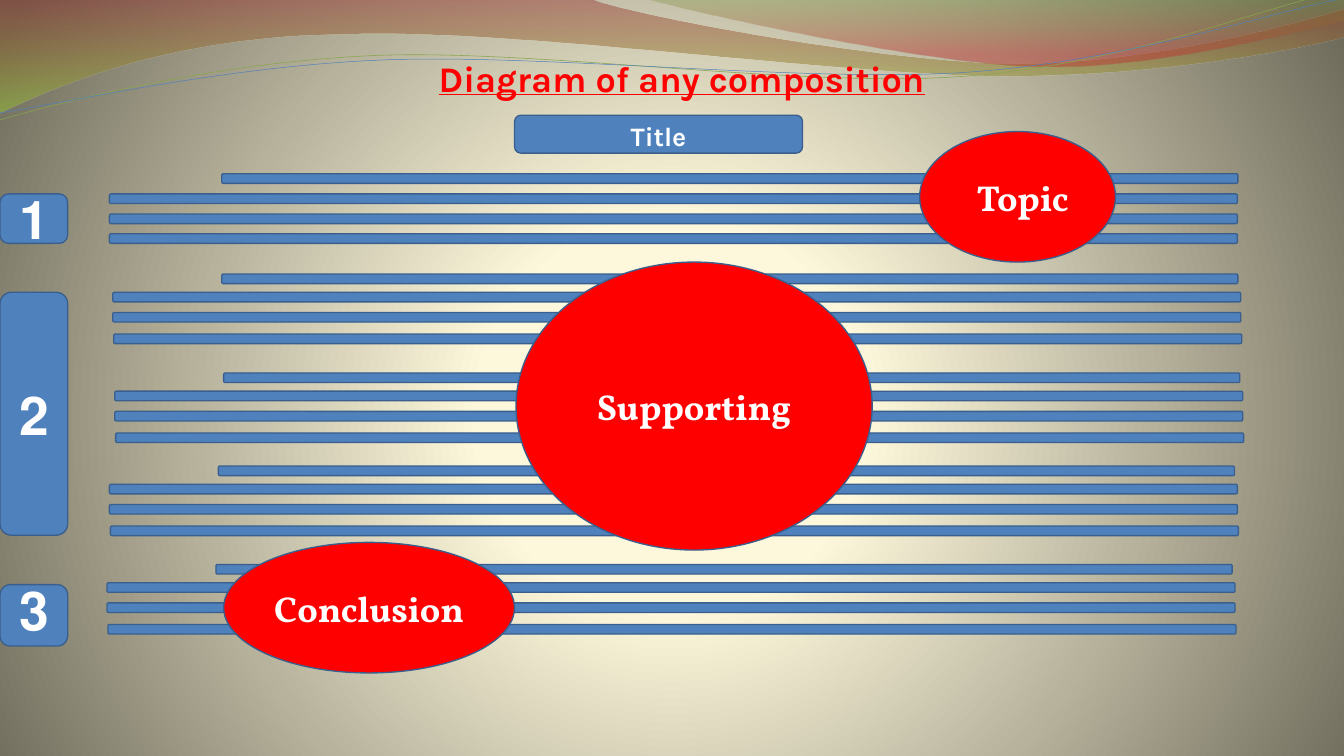
from math import cos, radians, sin

from pptx import Presentation
from pptx.dml.color import RGBColor
from pptx.enum.shapes import MSO_SHAPE
from pptx.enum.text import MSO_ANCHOR, PP_ALIGN
from pptx.oxml import parse_xml
from pptx.oxml.ns import nsdecls, qn
from pptx.util import Inches, Pt

ROUNDED, ELLIPSE = MSO_SHAPE.ROUNDED_RECTANGLE, MSO_SHAPE.OVAL
TOP, MIDDLE, BOTTOM = MSO_ANCHOR.TOP, MSO_ANCHOR.MIDDLE, MSO_ANCHOR.BOTTOM
CENTER = PP_ALIGN.CENTER
TITLE_ONLY = 5

COLORS = {
    "blue": "4F81BD", "edge": "3A5F8C", "red": "FF0000", "white": "FFFFFF",
    "olive": "89A54F", "cream": "FFF9DA", "ivory": "FDF7DB", "umber": "6F6C5C",
    "maroon": "973330", "lime": "95C238", "moss": "769537", "brick": "BE3330",
}
HEADING_FONT, BODY_FONT = "Karla", "Vollkorn"

# Each wave: a start point, then cubic segments (6 numbers) or straight ones (2).
BROAD_WAVE = [
    (0, -0.01), (12.33, -0.02), (13.32, 0.35, 18.58, 1.32, 21.23, 1.32),
    (23.88, 1.32, 26.83, 0.54, 28, 0.18), (28.03, 0.76),
    (27.53, 0.92, 24.35, 1.59, 20.88, 1.58), (17.41, 1.57, 10.69, 0.58, 7.2, 0.71),
    (3.62, 0.74, 1.28, 1.74, -0.03, 2.37),
]
RIGHT_WAVE = [
    (13.42, -0.02), (14.26, 0.23, 19.09, 1.29, 21.52, 1.37),
    (23.95, 1.45, 26.92, 0.67, 28, 0.44), (28, 0),
]
OLIVE_THREAD = [
    (-0.01, 2.5), (1.34, 2.11, 4.42, 1.31, 7.75, 1.16),
    (11.07, 1.01, 16.58, 1.83, 19.94, 1.6), (23.31, 1.38, 26.28, 0.17, 27.94, -0.2),
]
BLUE_THREAD = [
    (-0.01, 2.35), (1.32, 2.16, 4.59, 1.39, 7.93, 1.25),
    (11.27, 1.11, 16.71, 1.72, 20.06, 1.51), (23.41, 1.29, 26.35, 0.29, 28, -0.04),
]
THREAD_TILT = -2.7
THREAD_CENTER = (13.98, 1.23)

# Each paragraph: left of its first line, left of the others, top, line offsets,
# extra shift of the last line.
EVEN_LINES = (0, 0.42, 0.84, 1.25)
LOOSE_LINES = (0, 0.38, 0.8, 1.25)
PARAGRAPHS = [
    (4.62, 2.28, 3.62, EVEN_LINES, 0),
    (4.62, 2.35, 5.71, LOOSE_LINES, 0.02),
    (4.66, 2.39, 7.77, LOOSE_LINES, 0.02),
    (4.55, 2.28, 9.71, LOOSE_LINES, 0.02),
    (4.5, 2.23, 11.76, LOOSE_LINES, 0.02),
]
FIRST_LINE_WIDTH, LINE_WIDTH, LINE_HEIGHT = 21.17, 23.5, 0.2

PARTS = [
    ("Topic ", 19.16, 2.74, 4.08, 2.72),
    ("Supporting", 10.75, 5.46, 7.42, 6),
    ("Conclusion", 4.66, 11.3, 6.06, 2.72),
]
NUMBERS = [
    ("1", 4.04, 1.03, MIDDLE),
    ("2", 6.09, 5.06, MIDDLE),
    ("3", 12.18, 1.28, BOTTOM),
]


def rgb(name):
    return RGBColor.from_string(COLORS[name])


def pairs(segment):
    """Split a flat segment into (x, y) points."""
    return list(zip(segment[::2], segment[1::2]))


def level(wave):
    """Turn a tilted thread back to the horizontal."""
    turn, (cx, cy) = radians(-THREAD_TILT), THREAD_CENTER
    flat = []
    for segment in wave:
        turned = []
        for x, y in pairs(segment):
            dx, dy = x - cx, y - cy
            turned += [cx + dx * cos(turn) - dy * sin(turn),
                       cy + dx * sin(turn) + dy * cos(turn)]
        flat.append(tuple(turned))
    return flat


def set_gradient(fill, holder, stops, direction):
    """Fill with stops of (position %, colour, opacity %)."""
    fill.gradient()
    stop_xml = ""
    for pos, color, opacity in stops:
        alpha = f'<a:alpha val="{opacity * 1000}"/>' if opacity < 100 else ""
        stop_xml += (f'<a:gs pos="{pos * 1000}"><a:srgbClr val="{COLORS[color]}">'
                     f"{alpha}</a:srgbClr></a:gs>")
    gradient = parse_xml(
        f'<a:gradFill {nsdecls("a")} rotWithShape="1"><a:gsLst>{stop_xml}</a:gsLst>'
        f"{direction}</a:gradFill>")
    holder.replace(holder.find(qn("a:gradFill")), gradient)


class DiagramSlide:
    def __init__(self, presentation):
        self.slide = presentation.slides.add_slide(presentation.slide_layouts[TITLE_ONLY])
        self.shapes = self.slide.shapes

    def background(self, stops):
        glow = ('<a:path path="circle"><a:fillToRect l="10000" t="110000" '
                'r="10000" b="100000"/></a:path>')
        fill = self.slide.background.fill
        fill.gradient()
        set_gradient(fill, self.slide.element.find(".//" + qn("p:bgPr")), stops, glow)

    def _freeform(self, wave, close):
        """Draw straight through the segment ends, then bend the cubic segments."""
        ends = [(Inches(segment[-2]), Inches(segment[-1])) for segment in wave]
        builder = self.shapes.build_freeform(*ends[0], scale=1.0)
        builder.add_line_segments(ends[1:], close=close)
        shape = builder.convert_to_shape()
        shape.shadow.inherit = False
        straights = list(shape.element.iter(qn("a:lnTo")))
        for straight, segment in zip(straights, wave[1:]):
            if len(segment) == 6:
                points = "".join(
                    f'<a:pt x="{Inches(x) - shape.left}" y="{Inches(y) - shape.top}"/>'
                    for x, y in pairs(segment))
                curve = parse_xml(
                    f'<a:cubicBezTo {nsdecls("a")}>{points}</a:cubicBezTo>')
                straight.getparent().replace(straight, curve)
        return shape

    def wave(self, wave, stops):
        shape = self._freeform(wave, True)
        shape.line.fill.background()
        set_gradient(shape.fill, shape.element.spPr, stops,
                     '<a:lin ang="5400000" scaled="0"/>')

    def thread(self, wave, color, width):
        shape = self._freeform(level(wave), False)
        shape.rotation = THREAD_TILT
        shape.fill.background()
        shape.line.color.rgb = rgb(color)
        shape.line.width = Pt(width)

    def _write(self, frame, text, font, size, color, anchor):
        frame.text = text
        frame.word_wrap = True
        frame.vertical_anchor = anchor
        paragraph = frame.paragraphs[0]
        paragraph.alignment = CENTER
        style = paragraph.runs[0].font
        style.name, style.size, style.bold = font, Pt(size), True
        style.color.rgb = rgb(color)
        return paragraph

    def title(self, text, left, top, width, height):
        title = self.shapes.title
        title.left, title.top = Inches(left), Inches(top)
        title.width, title.height = Inches(width), Inches(height)
        paragraph = self._write(title.text_frame, text, HEADING_FONT, 54, "red", TOP)
        paragraph.runs[0].font.underline = True
        self.shapes.element.append(title.element)  # in front of the waves

    def block(self, kind, left, top, width, height, fill="blue"):
        shape = self.shapes.add_shape(
            kind, Inches(left), Inches(top), Inches(width), Inches(height))
        shape.shadow.inherit = False
        shape.fill.solid()
        shape.fill.fore_color.rgb = rgb(fill)
        shape.line.color.rgb = rgb("edge")
        shape.line.width = Pt(2)
        return shape

    def label(self, shape, text, size, font=BODY_FONT, anchor=MIDDLE):
        paragraph = self._write(shape.text_frame, text, font, size, "white", anchor)
        paragraph._p.get_or_add_pPr().set("rtl", "1")


def main():
    presentation = Presentation()
    presentation.slide_width, presentation.slide_height = Inches(28), Inches(15.75)
    diagram = DiagramSlide(presentation)

    diagram.background([(0, "cream", 100), (25, "ivory", 100), (100, "umber", 100)])
    diagram.wave(BROAD_WAVE, [(0, "maroon", 45), (100, "lime", 55)])
    diagram.wave(RIGHT_WAVE, [(0, "moss", 30), (80, "brick", 45)])
    diagram.thread(OLIVE_THREAD, "olive", 0.85)
    diagram.thread(BLUE_THREAD, "blue", 0.75)
    diagram.title("Diagram of any composition", 7.91, 1.12, 12.58, 0.49)

    for first_left, left, top, offsets, last_shift in PARAGRAPHS:
        lefts = (first_left, left, left, left + last_shift)
        widths = (FIRST_LINE_WIDTH,) + (LINE_WIDTH,) * 3
        for line_left, offset, width in zip(lefts, offsets, widths):
            diagram.block(ROUNDED, line_left, top + offset, width, LINE_HEIGHT)

    heading = diagram.block(ROUNDED, 10.72, 2.4, 6, 0.79)
    diagram.label(heading, "Title", 40, HEADING_FONT, TOP)
    for text, *box in PARTS:
        diagram.label(diagram.block(ELLIPSE, *box, fill="red"), text, 54)
    for text, top, height, anchor in NUMBERS:
        number = diagram.block(ROUNDED, 0, top, 1.41, height)
        diagram.label(number, text, 80, anchor=anchor)

    presentation.save("out.pptx")


if __name__ == "__main__":
    main()
